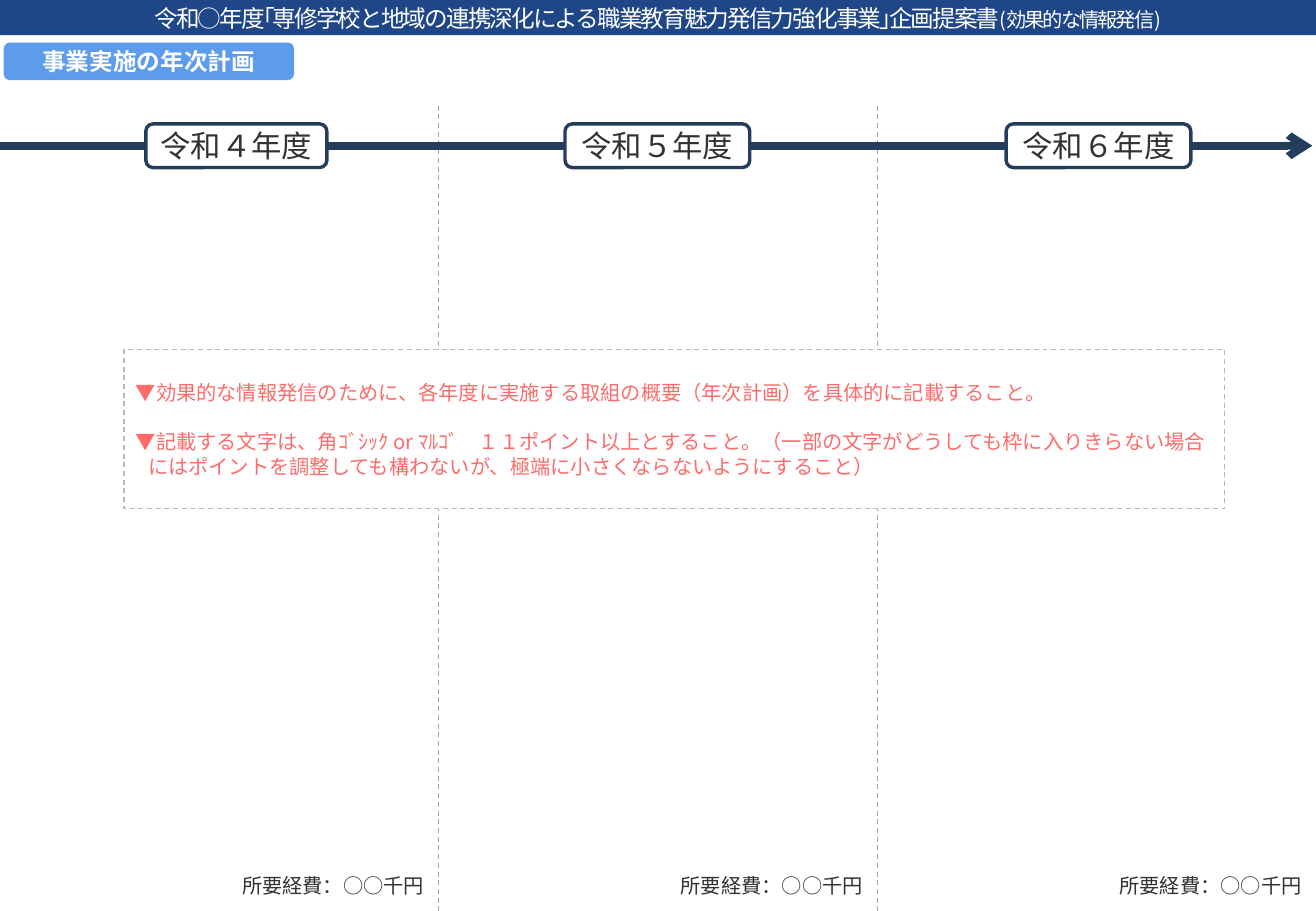
from lxml import etree
from pptx import Presentation
from pptx.dml.color import RGBColor
from pptx.enum.dml import MSO_LINE
from pptx.enum.shapes import MSO_CONNECTOR, MSO_SHAPE
from pptx.enum.text import MSO_ANCHOR, PP_ALIGN
from pptx.oxml.ns import qn
from pptx.util import Inches, Pt

STRAIGHT = MSO_CONNECTOR.STRAIGHT
RECT = MSO_SHAPE.RECTANGLE
ROUNDED = MSO_SHAPE.ROUNDED_RECTANGLE
DASH = MSO_LINE.DASH
MIDDLE = MSO_ANCHOR.MIDDLE
TOP = MSO_ANCHOR.TOP
LEFT = PP_ALIGN.LEFT
CENTER = PP_ALIGN.CENTER
RIGHT = PP_ALIGN.RIGHT

COLORS = {
    "banner": "1F4788",
    "section": "5D9CEC",
    "timeline": "243D5D",
    "divider": "A6A6A6",
    "note_border": "B9B9B9",
    "note": "FF6B6B",
    "text": "323232",
    "white": "FFFFFF",
}
BODY_FONT = "Noto Sans CJK JP"
LABEL_FONT = "Cabin"
WIDTH, HEIGHT = 10.83, 7.5
COLUMN = WIDTH / 3
LINE_HEIGHT = Pt(14.5)

TITLE = [
    ("令和○年度｢専修学校と地域の連携深化による職業教育魅力発信力強化事業｣企画提案書", 14),
    ("(効果的な情報発信)", 12),
]
YEARS = [
    ("令和４年度", 1.2, 1.49),
    ("令和５年度", 4.65, 1.52),
    ("令和６年度", 8.28, 1.52),
]
NOTES = [
    "▼効果的な情報発信のために、各年度に実施する取組の概要（年次計画）を具体的に記載すること。",
    "▼記載する文字は、角ｺﾞｼｯｸ or ﾏﾙｺﾞ　１１ポイント以上とすること。"
    "（一部の文字がどうしても枠に入りきらない場合にはポイントを調整しても構わないが、"
    "極端に小さくならないようにすること）",
]


def color(name):
    return RGBColor.from_string(COLORS[name])


def add_box(slide, box, fill, outline=None, weight=0.75, kind=RECT):
    shape = slide.shapes.add_shape(kind, *map(Inches, box))
    shape.shadow.inherit = False
    shape.fill.solid()
    shape.fill.fore_color.rgb = color(fill)
    if outline:
        shape.line.color.rgb = color(outline)
        shape.line.width = Pt(weight)
    else:
        shape.line.fill.background()
    return shape


def add_line(slide, start, end, name, weight):
    line = slide.shapes.add_connector(STRAIGHT, *map(Inches, start + end))
    line.line.color.rgb = color(name)
    line.line.width = Pt(weight)
    etree.SubElement(line.element.spPr, qn("a:effectLst"))
    return line


def style_frame(frame, anchor=MIDDLE, wrap=True, side=0.1, top=0):
    frame.word_wrap = wrap
    frame.vertical_anchor = anchor
    frame.margin_left = frame.margin_right = Inches(side)
    frame.margin_top, frame.margin_bottom = Inches(top), 0


def style_para(para, size, name, font=BODY_FONT, align=LEFT, bold=False):
    para.alignment = align
    para.font.size = Pt(size)
    para.font.name = font
    para.font.bold = bold
    para.font.color.rgb = color(name)


def write_line(shape, text, size, name, font=BODY_FONT, align=CENTER, bold=False):
    style_frame(shape.text_frame, wrap=False)
    para = shape.text_frame.paragraphs[0]
    para.text = text
    style_para(para, size, name, font, align, bold)


def draw_header(slide, box):
    left, top, width, height = box
    banner = add_box(slide, box, "banner")
    style_frame(banner.text_frame, wrap=False)
    para = banner.text_frame.paragraphs[0]
    style_para(para, 14, "white", align=CENTER)
    for text, size in TITLE:
        span = para.add_run()
        span.text = text
        span.font.size = Pt(size)
        span.font._element.set("spc", "-120")
    section_box = (left + 0.03, top + height + 0.06, 2.39, 0.31)
    section = add_box(slide, section_box, "section", kind=ROUNDED)
    write_line(section, "事業実施の年次計画", 14, "white", LABEL_FONT, bold=True)


def draw_columns(slide, box):
    left, top, width, height = box
    for index in range(len(YEARS)):
        edge = left + (index + 1) * COLUMN
        if index < len(YEARS) - 1:
            divider = add_line(slide, (edge, top), (edge, top + height), "divider", 0.75)
            divider.line.dash_style = DASH
        cost_box = (edge - COLUMN, top + height - 0.36, COLUMN - 0.02, 0.3)
        cost = slide.shapes.add_textbox(*map(Inches, cost_box))
        write_line(cost, "所要経費：○○千円", 12, "text", align=RIGHT)
        cost.text_frame.word_wrap = True


def draw_timeline(slide, box):
    left, top, width, height = box
    middle = top + height / 2
    arrow = add_line(slide, (left, middle), (left + width, middle), "timeline", 4.5)
    etree.SubElement(arrow.line._get_or_add_ln(), qn("a:tailEnd"), type="arrow")
    for label, offset, badge_width in YEARS:
        badge_box = (left + offset, top, badge_width, height)
        badge = add_box(slide, badge_box, "white", "timeline", 2, ROUNDED)
        write_line(badge, label, 18, "text", LABEL_FONT)


def draw_note(slide, box):
    panel = add_box(slide, box, "white", "note_border")
    panel.line.dash_style = DASH
    frame = panel.text_frame
    style_frame(frame, anchor=TOP, top=0.25)
    for index, text in enumerate(NOTES):
        para = frame.add_paragraph() if index else frame.paragraphs[0]
        para.text = text
        style_para(para, 12, "note")
        para.line_spacing = LINE_HEIGHT
        para.space_before = LINE_HEIGHT if index else 0
        properties = para._p.get_or_add_pPr()
        properties.set("marL", str(Inches(0.1)))
        properties.set("indent", str(Inches(-0.1)))


def main():
    deck = Presentation()
    deck.slide_width, deck.slide_height = Inches(WIDTH), Inches(HEIGHT)
    slide = deck.slides.add_slide(deck.slide_layouts[6])
    draw_columns(slide, (0, 0.87, WIDTH, HEIGHT - 0.87))
    draw_header(slide, (0, 0, WIDTH, 0.29))
    draw_timeline(slide, (0, 1.02, WIDTH - 0.03, 0.36))
    draw_note(slide, (1.02, 2.88, 9.06, 1.31))
    deck.save("out.pptx")


if __name__ == "__main__":
    main()
